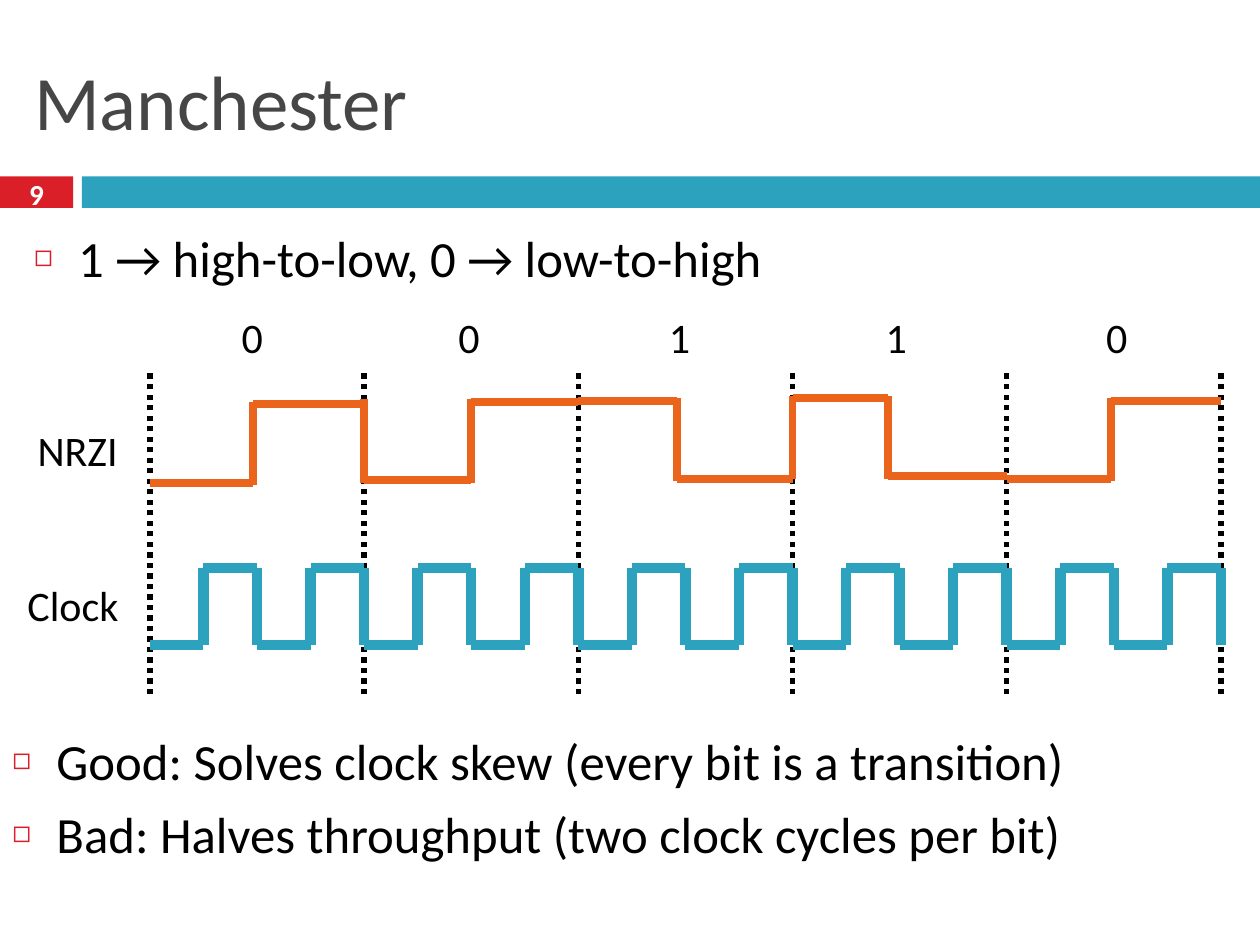
from lxml.etree import SubElement
from pptx import Presentation
from pptx.dml.color import RGBColor as RGB
from pptx.enum.dml import MSO_LINE as DASH
from pptx.enum.shapes import MSO_CONNECTOR as CONN, MSO_SHAPE as SHAPE
from pptx.enum.text import MSO_ANCHOR as ANCHOR, MSO_AUTO_SIZE as FIT, PP_ALIGN as ALIGN
from pptx.oxml.ns import qn
from pptx.util import Inches, Pt

COLORS = {"red": "DA1F28", "teal": "2DA2BF", "orange": "EB641B",
          "title": "464646", "text": "000000", "white": "FFFFFF"}
X0, BIT = 1.19, 1.7               # left edge and width of one bit column
HALF = BIT / 4                    # half a clock cycle
CLOCK_HIGH, CLOCK_LOW = 4.51, 5.12
SWING, OVERLAP = 0.62, 0.02       # signal height, overlap at its corners
# bit, x of its mid transition, y of its low level, left of its label
BITS = [(0, 2.01, 3.83, 1.82), (0, 3.74, 3.81, 3.54), (1, 5.37, 3.8, 5.21),
        (1, 7.05, 3.78, 6.93), (0, 8.82, 3.8, 8.68)]

prs = Presentation()
prs.slide_width, prs.slide_height = Inches(10), Inches(7.5)
s = prs.slides.add_slide(prs.slide_layouts[1])


def put_text(text, box, sp=None, size=24, color="text", bold=False, align=ALIGN.LEFT,
             anchor=ANCHOR.TOP, wrap=True, bullet=None):
    """Write one paragraph per line of text into sp, or into a new text box."""
    box = [Inches(v) for v in box]
    sp = sp or s.shapes.add_textbox(*box)
    sp.left, sp.top, sp.width, sp.height = box
    tf = sp.text_frame
    tf.text = text
    tf.word_wrap, tf.vertical_anchor = wrap, anchor
    tf.auto_size = FIT.NONE if wrap else FIT.SHAPE_TO_FIT_TEXT
    for p in tf.paragraphs:
        p.alignment = align
        f = p.runs[0].font
        f.name, f.size, f.bold = "Calibri", Pt(size), bold
        f.color.rgb = RGB.from_string(COLORS[color])
        if bullet:
            p.space_before = Pt(7)
            pPr = p._p.get_or_add_pPr()
            pPr.set("marL", str(Inches(0.35)))
            pPr.set("indent", str(Inches(-0.35)))
            clr = SubElement(pPr, qn("a:buClr"))
            SubElement(clr, qn("a:srgbClr"), val=COLORS["red"])
            SubElement(pPr, qn("a:buSzPct"), val="60000")
            SubElement(pPr, qn("a:buFont"), typeface="Calibri")
            SubElement(pPr, qn("a:buChar"), char=bullet)


def add_line(x1, y1, x2, y2, color, width, dash=None):
    ln = s.shapes.add_connector(CONN.STRAIGHT, *[Inches(v) for v in (x1, y1, x2, y2)])
    ln.line.color.rgb = RGB.from_string(COLORS[color])
    ln.line.width = Pt(width)
    if dash:
        ln.line.dash_style = dash
    SubElement(ln._element.spPr, qn("a:effectLst"))


# Header band, title and lists
for left, width, color in [(0, 0.58, "red"), (0.65, 9.35, "teal")]:
    bar = s.shapes.add_shape(SHAPE.RECTANGLE, Inches(left), Inches(1.4), Inches(width), Inches(0.25))
    bar.fill.solid()
    bar.fill.fore_color.rgb = RGB.from_string(COLORS[color])
    bar.line.fill.background()
    bar.shadow.inherit = False

put_text("Manchester", (0.17, 0.25, 9.67, 1.08), sp=s.shapes.title, size=44,
         color="title", anchor=ANCHOR.MIDDLE)
put_text("9", (0, 1.37, 0.58, 0.33), size=16.6, color="white", bold=True,
         align=ALIGN.CENTER, anchor=ANCHOR.MIDDLE)
put_text("1 → high-to-low, 0 → low-to-high", (0.17, 1.75, 9.67, 0.67),
         sp=s.placeholders[1], size=29, bullet="◻")
put_text("Good: Solves clock skew (every bit is a transition)\n"
         "Bad: Halves throughput (two clock cycles per bit)",
         (0, 5.74, 10, 1.47), size=29, bullet="◻")

# Bit boundaries
for i in range(len(BITS) + 1):
    x = X0 + i * BIT
    add_line(x, 5.51, x, 2.93, "text", 3, DASH.ROUND_DOT)

# Clock: two cycles per bit, each low and then high
for i in range(2 * len(BITS)):
    start = X0 + 2 * i * HALF
    mid, end = start + HALF, start + 2 * HALF
    add_line(start, CLOCK_LOW, mid, CLOCK_LOW, "teal", 6)
    add_line(mid, CLOCK_LOW, mid, CLOCK_HIGH, "teal", 6)
    add_line(mid, CLOCK_HIGH, end, CLOCK_HIGH, "teal", 6)
    add_line(end, CLOCK_HIGH, end, CLOCK_LOW, "teal", 6)

# Signal: every bit changes level in its middle; equal neighbours also change between
for i, (bit, mid, low, label_left) in enumerate(BITS):
    start, end, high = X0 + i * BIT, X0 + (i + 1) * BIT, low - SWING
    before, after = (high, low) if bit else (low, high)
    add_line(start, before, mid, before, "orange", 4.5)
    add_line(mid, low + OVERLAP, mid, high - OVERLAP, "orange", 4.5)
    add_line(mid, after, end, after, "orange", 4.5)
    if i and BITS[i - 1][0] == bit:
        add_line(start, high - OVERLAP, start, low + OVERLAP, "orange", 4.5)
    put_text(str(bit), (label_left, 2.42, 0.39, 0.5), wrap=False)

put_text("NRZI", (0.2, 3.32, 0.84, 0.5), wrap=False)
put_text("Clock", (0.12, 4.55, 0.93, 0.5), wrap=False)

prs.save("out.pptx")
